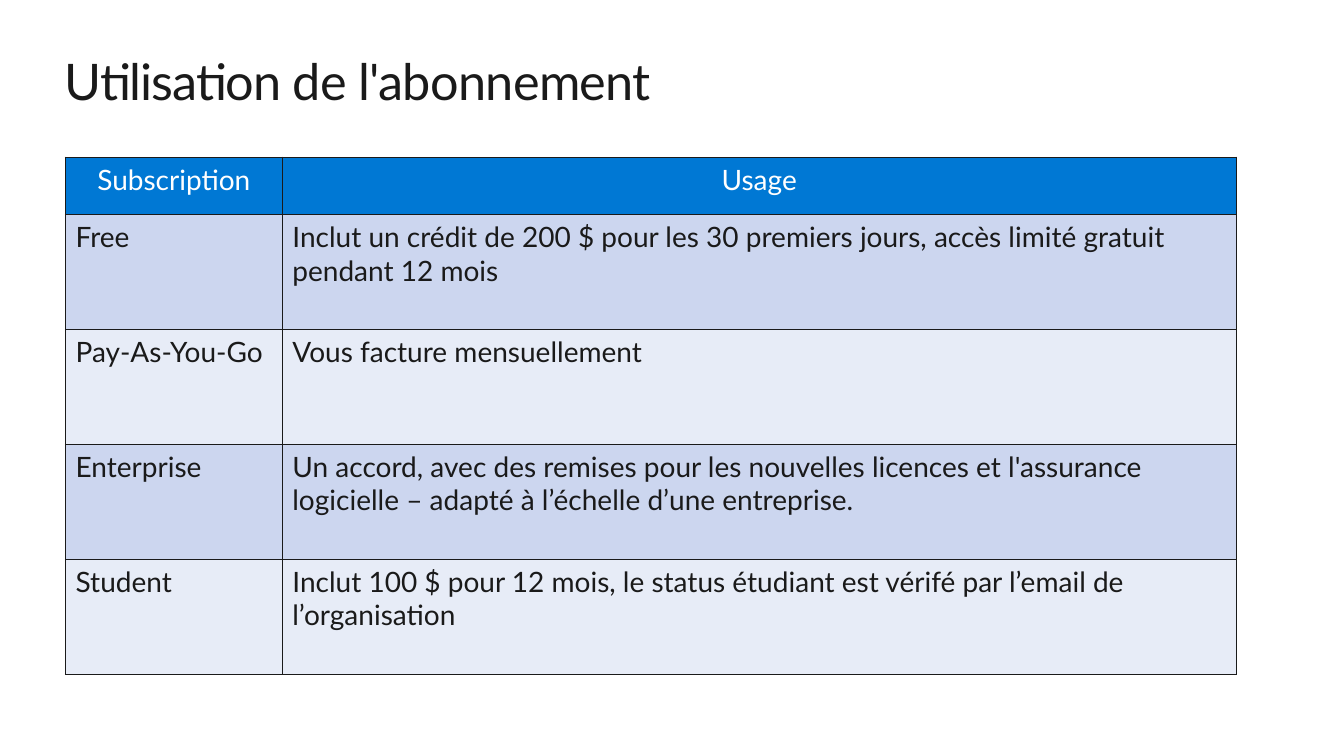
from lxml import etree
from pptx import Presentation
from pptx.dml.color import RGBColor
from pptx.enum.text import PP_ALIGN
from pptx.oxml.ns import qn
from pptx.util import Inches, Pt

TITLE = "Utilisation de l'abonnement"
ROWS = [
    ("Subscription", "Usage"),
    ("Free", "Inclut un crédit de 200 $ pour les 30 premiers jours, "
             "accès limité gratuit pendant 12 mois"),
    ("Pay-As-You-Go", "Vous facture mensuellement"),
    ("Enterprise", "Un accord, avec des remises pour les nouvelles licences et "
                   "l'assurance logicielle – adapté à l’échelle d’une entreprise."),
    ("Student", "Inclut 100 $ pour 12 mois, le status étudiant est vérifé "
                "par l’email de l’organisation"),
]
COLS = (2.15, 9.46)
HEAD_H, BODY_H = 0.57, 1.14

FONT = "Lato"
INK = RGBColor(0x1A, 0x1A, 0x1A)
WHITE = RGBColor(0xFF, 0xFF, 0xFF)
BLUE = RGBColor(0x00, 0x78, 0xD4)
BANDS = (RGBColor(0xE7, 0xEC, 0xF7), RGBColor(0xCC, 0xD6, 0xEF))
CENTER, LEFT = PP_ALIGN.CENTER, PP_ALIGN.LEFT


def style(par, size, color):
    par.font.name = FONT
    par.font.size = Pt(size)
    par.font.color.rgb = color


def add_border(cell):
    props = cell._tc.get_or_add_tcPr()
    for i, side in enumerate(("lnL", "lnR", "lnT", "lnB")):
        line = etree.Element(qn("a:" + side), w=str(Pt(1)))
        fill = etree.SubElement(line, qn("a:solidFill"))
        etree.SubElement(fill, qn("a:srgbClr"), val=str(INK))
        props.insert(i, line)


def add_title(slide):
    box = slide.shapes.add_textbox(Inches(0.64), Inches(0.5), Inches(12.05), Inches(0.61))
    frame = box.text_frame
    frame.word_wrap = True
    frame.margin_left = frame.margin_right = frame.margin_top = frame.margin_bottom = 0
    par = frame.paragraphs[0]
    run = par.add_run()
    run.text = TITLE
    style(par, 36, INK)
    run.font._element.set("spc", "-50")


def add_plans(slide):
    heights = [HEAD_H] + [BODY_H] * (len(ROWS) - 1)
    table = slide.shapes.add_table(
        len(ROWS), len(COLS), Inches(0.65), Inches(1.56),
        Inches(sum(COLS)), Inches(sum(heights))).table
    for col, width in zip(table.columns, COLS):
        col.width = Inches(width)
    for r, (row, height) in enumerate(zip(ROWS, heights)):
        table.rows[r].height = Inches(height)
        head = r == 0
        for c, text in enumerate(row):
            cell = table.cell(r, c)
            cell.text = text
            cell.fill.solid()
            cell.fill.fore_color.rgb = BLUE if head else BANDS[r % 2]
            par = cell.text_frame.paragraphs[0]
            par.alignment = CENTER if head else LEFT
            style(par, 20, WHITE if head else INK)
            par.font.bold = False
            add_border(cell)


def main():
    deck = Presentation()
    deck.slide_width, deck.slide_height = Inches(13.33), Inches(7.5)
    slide = deck.slides.add_slide(deck.slide_layouts[6])
    add_title(slide)
    add_plans(slide)
    deck.save("out.pptx")


if __name__ == "__main__":
    main()
